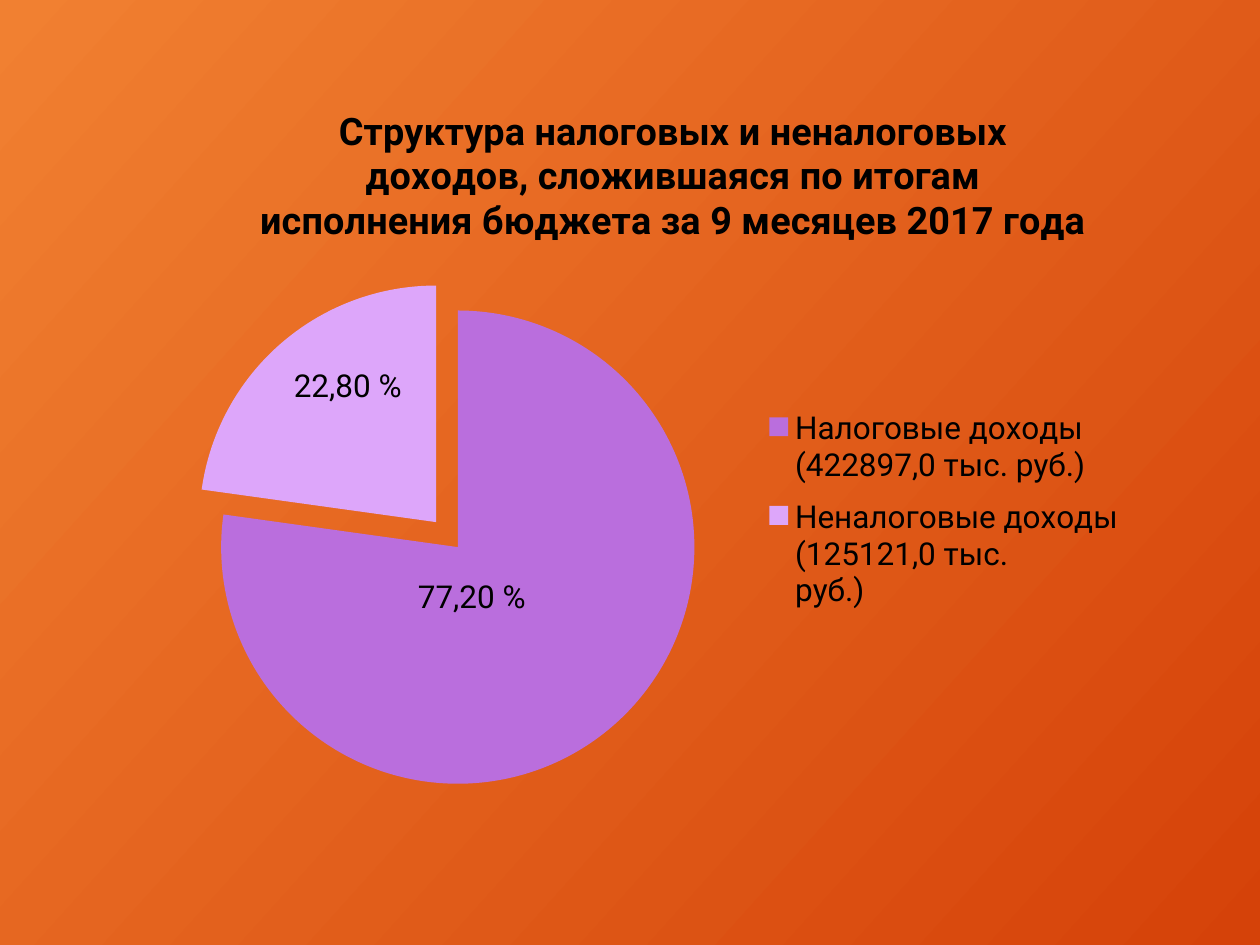
from dataclasses import dataclass

from lxml.etree import SubElement
from pptx import Presentation
from pptx.chart.data import CategoryChartData
from pptx.dml.color import RGBColor
from pptx.enum.chart import XL_CHART_TYPE, XL_LABEL_POSITION, XL_LEGEND_POSITION
from pptx.oxml import parse_xml
from pptx.oxml.ns import nsdecls, qn
from pptx.util import Cm, Pt

BLACK = "000000"
TITLE = ("Структура налоговых и неналоговых доходов, сложившаяся по итогам "
         "исполнения бюджета за 9 месяцев 2017 года")


@dataclass
class Slice:
    category: str
    value: float
    label: str
    fill: str
    explosion: int
    label_shift: dict


SLICES = [
    Slice("Налоговые доходы\n(422897,0 тыс. руб.)", 77.2, "77,20 %", "BA6EDD",
          12, {"x": -0.06, "y": -0.05}),
    Slice("Неналоговые доходы\n(125121,0 тыс.\nруб.)", 22.8, "22,80 %", "DDA6FA",
          2, {"x": -0.01, "y": -0.06}),
]


def color(value: str) -> RGBColor:
    return RGBColor.from_string(value)


def format_font(font, size: float, **values) -> None:
    font.color.rgb = color(BLACK)
    for name, value in {"name": "Roboto", "size": Pt(size), **values}.items():
        setattr(font, name, value)


def place(element, after: str, settings: dict) -> None:
    """Give a chart part a manual layout, right after the named child."""
    for old in element.findall(qn("c:layout")):
        element.remove(old)
    layout = parse_xml(f"<c:layout {nsdecls('c')}/>")
    manual = SubElement(layout, qn("c:manualLayout"))
    for name, value in settings.items():
        SubElement(manual, qn(f"c:{name}")).set("val", str(value))
    if after:
        element.find(qn(after)).addnext(layout)
    else:
        element.insert(0, layout)


def paint_background(slide) -> None:
    fill = slide.background.fill
    fill.gradient()
    fill.gradient_angle = 360 - 42
    for stop, value in zip(fill.gradient_stops, ("F18031", "D54209")):
        stop.color.rgb = color(value)


def style_slice(point, item: Slice) -> None:
    point.format.fill.solid()
    point.format.fill.fore_color.rgb = color(item.fill)
    point.format.line.fill.background()
    label = point.data_label
    span = label.text_frame.paragraphs[0].add_run()
    span.text = item.label
    format_font(span.font, 18, bold=False)
    label.position = XL_LABEL_POSITION.CENTER


def explode(data_point, percent: int) -> None:
    explosion = parse_xml(f'<c:explosion {nsdecls("c")} val="{percent}"/>')
    data_point.find(qn("c:spPr")).addprevious(explosion)


def add_pie(slide) -> None:
    data = CategoryChartData(number_format="0.0")
    data.categories = [item.category for item in SLICES]
    data.add_series("Series 1", [item.value for item in SLICES])
    chart = slide.shapes.add_chart(XL_CHART_TYPE.PIE, Cm(2.11), Cm(1.52),
                                   Cm(21.41), Cm(15.39), data).chart
    format_font(chart.font, 18)

    title = chart.chart_title
    span = title.text_frame.paragraphs[0].add_run()
    span.text = TITLE
    format_font(span.font, 21.6, bold=True)
    title.include_in_layout = False
    edges = {"xMode": "edge", "yMode": "edge"}
    place(title._element, "c:tx", {**edges, "x": 0.14, "y": 0.03})

    chart.has_legend = True
    legend = chart.legend
    legend.position = XL_LEGEND_POSITION.RIGHT
    legend.include_in_layout = False
    format_font(legend.font, 18)
    place(legend._element, "c:legendPos",
          {**edges, "x": 0.61, "y": 0.42, "w": 0.36, "h": 0.3})

    plot = chart.plots[0]
    plot.vary_by_categories = True
    series = plot.series[0]
    labels = series.data_labels
    labels.show_percentage = True
    labels.show_value = False
    labels.number_format = "0.00%"
    labels.number_format_is_linked = False
    format_font(labels.font, 18)
    for index, item in enumerate(SLICES):
        style_slice(series.points[index], item)
    data_points = series._element.findall(qn("c:dPt"))
    data_labels = series._element.iter(qn("c:dLbl"))
    for data_point, label, item in zip(data_points, data_labels, SLICES):
        explode(data_point, item.explosion)
        place(label, "c:idx", item.label_shift)
    place(chart._chartSpace.chart.plotArea, "",
          {"layoutTarget": "inner", **edges,
           "x": 0.03, "y": 0.28, "w": 0.57, "h": 0.62})


def main() -> None:
    deck = Presentation()
    deck.slide_width, deck.slide_height = Cm(25.4), Cm(19.05)
    slide = deck.slides.add_slide(deck.slide_layouts[6])
    paint_background(slide)
    add_pie(slide)
    deck.save("out.pptx")


if __name__ == "__main__":
    main()
